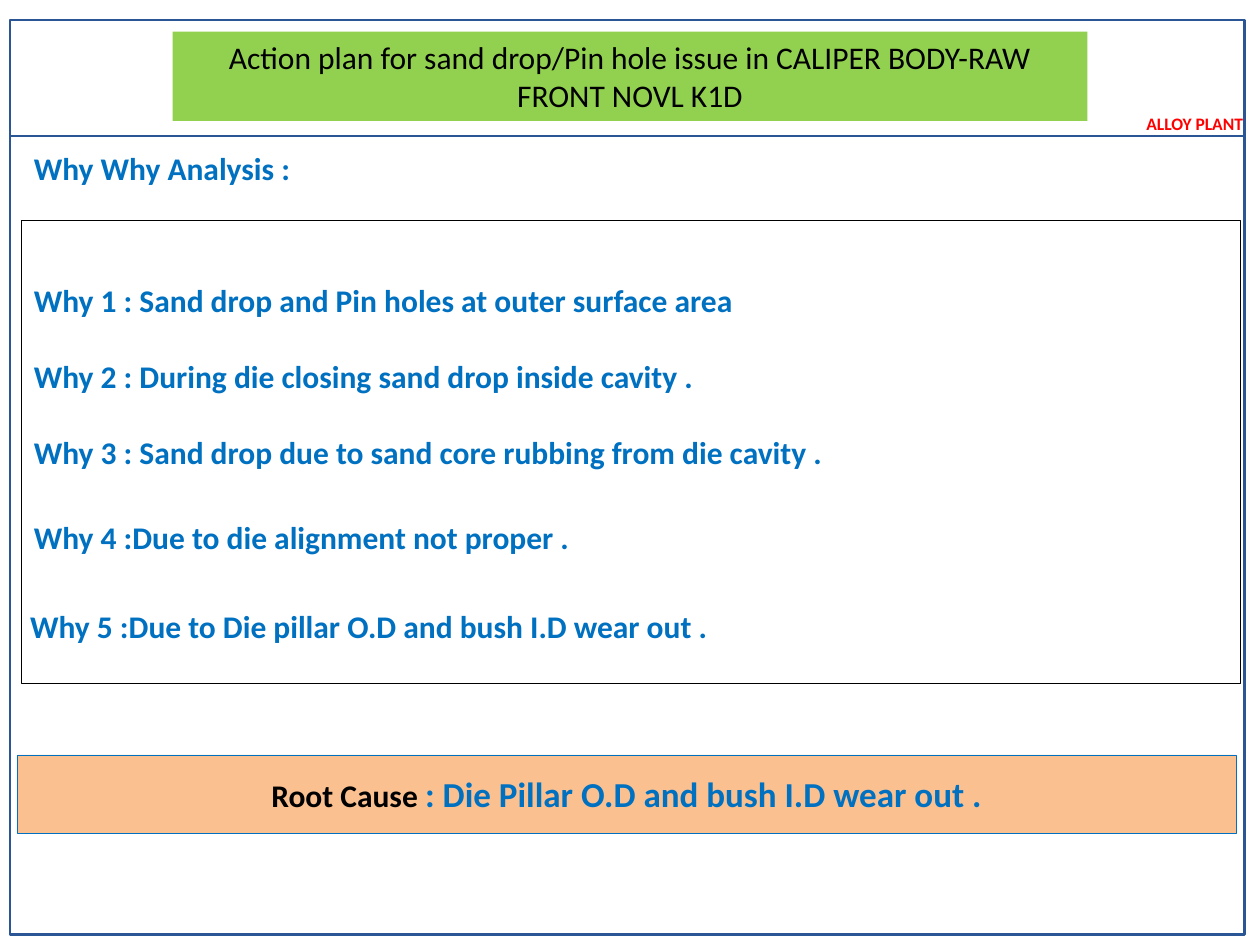
from dataclasses import dataclass
from typing import Optional

from lxml import etree
from pptx import Presentation
from pptx.dml.color import RGBColor
from pptx.enum import shapes, text
from pptx.oxml import ns
from pptx.util import Inches, Pt

BLUE = RGBColor(0x00, 0x70, 0xC0)
FRAME_BLUE = RGBColor(0x2A, 0x56, 0x96)
BLACK = RGBColor(0x00, 0x00, 0x00)
RED = RGBColor(0xFF, 0x00, 0x00)
GREEN = RGBColor(0x92, 0xD0, 0x50)
ORANGE = RGBColor(0xFA, 0xC0, 0x90)

LEFT, MIDDLE = text.PP_ALIGN.LEFT, text.MSO_ANCHOR.MIDDLE
CENTER = text.PP_ALIGN.CENTER
TOP, BOTTOM = text.MSO_ANCHOR.TOP, text.MSO_ANCHOR.BOTTOM


@dataclass(frozen=True)
class Area:
    left: float
    top: float
    width: float
    height: float

    def lengths(self) -> list:
        return [Inches(n) for n in (self.left, self.top, self.width, self.height)]


@dataclass(frozen=True)
class Style:
    size: int = 18
    color: RGBColor = BLUE
    bold: bool = True


@dataclass(frozen=True)
class Label:
    area: Area
    words: str
    anchor: text.MSO_ANCHOR
    style: Style = Style()
    wrap: bool = True


def format_font(font, style: Style) -> None:
    font.name = "Calibri"
    font.size = Pt(style.size)
    font.bold = style.bold
    font.color.rgb = style.color


def write_lines(shape, lines: list[str], style: Style, alignment, anchor) -> None:
    frame = shape.text_frame
    frame.text = "\n".join(lines)
    frame.vertical_anchor = anchor
    for paragraph in frame.paragraphs:
        paragraph.alignment = alignment
        for run in paragraph.runs:
            format_font(run.font, style)


def add_label(slide, label: Label) -> None:
    box = slide.shapes.add_textbox(*label.area.lengths())
    box.text_frame.word_wrap = label.wrap
    write_lines(box, [label.words], label.style, LEFT, label.anchor)


def add_rectangle(slide, area: Area, fill: Optional[RGBColor] = None,
                  line: Optional[RGBColor] = None, width: float = 0.25):
    shape = slide.shapes.add_shape(shapes.MSO_SHAPE.RECTANGLE, *area.lengths())
    shape.shadow.inherit = False
    if fill is None:
        shape.fill.background()
    else:
        shape.fill.solid()
        shape.fill.fore_color.rgb = fill
    if line is None:
        shape.line.fill.background()
    else:
        shape.line.color.rgb = line
        shape.line.width = Pt(width)
    shape.text_frame.word_wrap = True
    return shape


def add_frame(slide) -> None:
    """Draw the page border and the rule below the header."""
    rule = slide.shapes.add_connector(
        shapes.MSO_CONNECTOR.STRAIGHT,
        Inches(0.08), Inches(1.08), Inches(9.88), Inches(1.08))
    rule.line.color.rgb = FRAME_BLUE
    rule.line.width = Pt(1.5)
    etree.SubElement(rule._element.spPr, ns.qn("a:effectLst"))
    add_rectangle(slide, Area(0.08, 0.16, 9.8, 7.26), line=FRAME_BLUE, width=1.5)


def add_why_panel(slide) -> None:
    panel = add_rectangle(slide, Area(0.17, 1.75, 9.67, 3.67), line=BLACK)
    panel.text_frame.margin_top = Inches(0.48)
    write_lines(panel, [
        "Why 1 : Sand drop and Pin holes at outer surface area",
        "Why 2 : During die closing sand drop inside cavity .",
        "Why 3 : Sand drop due to sand core rubbing from die cavity .",
    ], Style(), LEFT, TOP)
    for paragraph in panel.text_frame.paragraphs[1:]:
        paragraph.space_before = Pt(21.7)


def add_root_cause(slide) -> None:
    banner = add_rectangle(slide, Area(0.14, 5.99, 9.67, 0.62), ORANGE, BLUE)
    write_lines(banner, ["Root Cause "], Style(color=BLACK), CENTER, MIDDLE)
    cause = banner.text_frame.paragraphs[0].add_run()
    cause.text = ": Die Pillar O.D and bush I.D wear out ."
    format_font(cause.font, Style(size=20))


def add_title(slide) -> None:
    title = add_rectangle(slide, Area(1.37, 0.25, 7.26, 0.71), GREEN)
    title.text_frame.margin_left = title.text_frame.margin_right = Inches(0.3)
    write_lines(title, [
        "Action plan for sand drop/Pin hole issue in CALIPER BODY-RAW FRONT NOVL K1D",
    ], Style(color=BLACK, bold=False), CENTER, TOP)


LABELS = [
    Label(Area(9, 0.85, 1.17, 0.25), "ALLOY PLANT", TOP, Style(10, RED), wrap=False),
    Label(Area(0.17, 1.17, 9.67, 0.33), "Why Why Analysis :", MIDDLE),
    Label(Area(0.17, 3.75, 5, 0.71), "Why 4 :Due to die alignment not proper .", BOTTOM),
    Label(Area(0.14, 4.46, 6.11, 0.71),
          "Why 5 :Due to Die pillar O.D and bush I.D wear out .", BOTTOM),
]


def main() -> None:
    presentation = Presentation()
    presentation.slide_width, presentation.slide_height = Inches(10), Inches(7.5)
    slide = presentation.slides.add_slide(presentation.slide_layouts[6])
    add_frame(slide)
    add_why_panel(slide)
    add_root_cause(slide)
    for label in LABELS:
        add_label(slide, label)
    add_title(slide)
    presentation.save("out.pptx")


if __name__ == "__main__":
    main()
